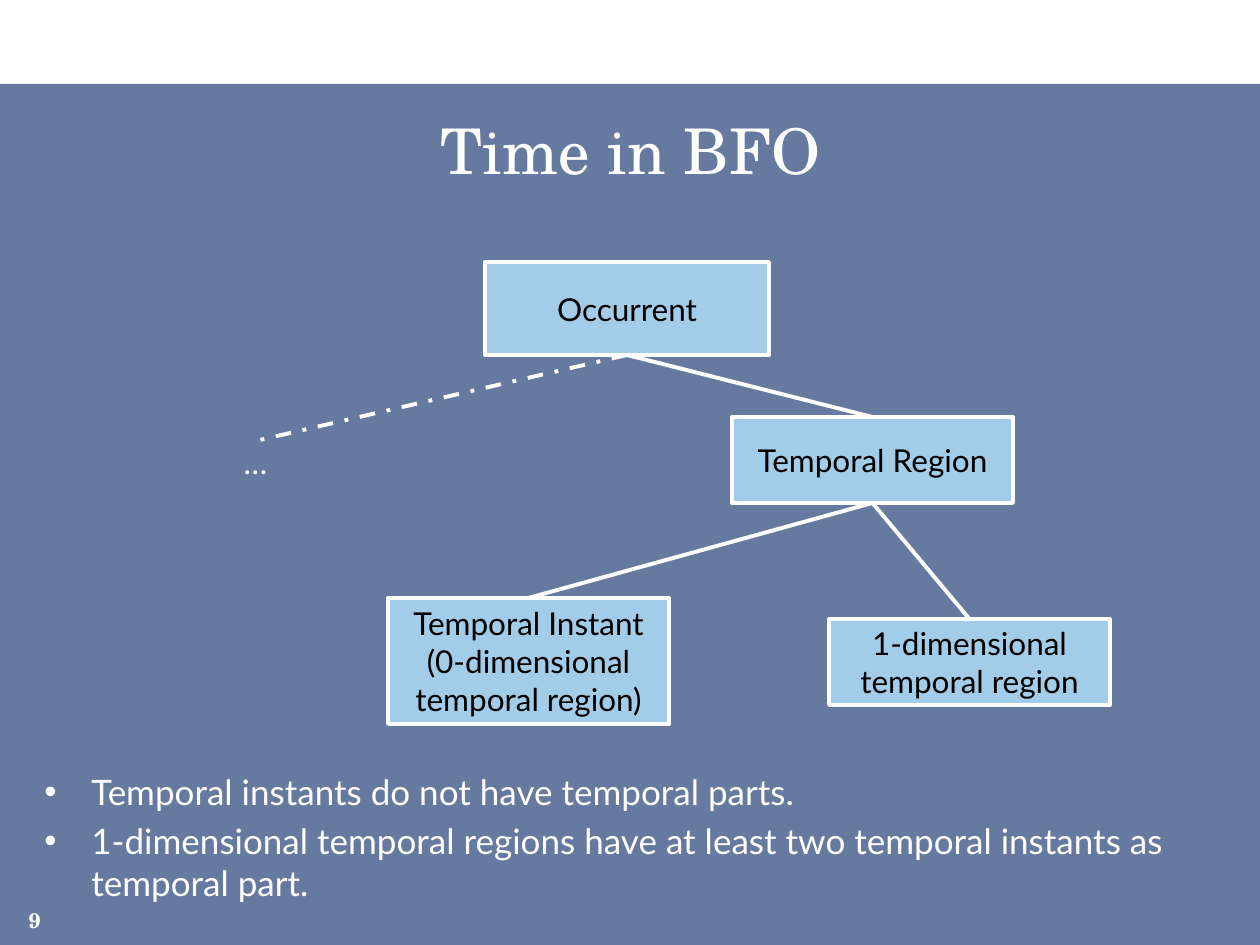
from lxml.etree import SubElement
from pptx import Presentation
from pptx.dml.color import RGBColor
from pptx.enum.dml import MSO_LINE
from pptx.enum.shapes import MSO_CONNECTOR, MSO_SHAPE
from pptx.enum.text import MSO_ANCHOR, PP_ALIGN
from pptx.oxml.ns import qn
from pptx.util import Emu, Pt

PX_PER_INCH = 126
WHITE = RGBColor(0xFF, 0xFF, 0xFF)
BLACK = RGBColor(0x00, 0x00, 0x00)
NAVY = RGBColor(0x00, 0x20, 0x60)
SKY = RGBColor(0xA2, 0xCC, 0xE8)
SANS = "Lato"
SERIF = "TeX Gyre Schola"
BOTTOM, TOP = 2, 0


def px(length):
    return Emu(round(length * 914400 / PX_PER_INCH))


def write_text(shape, text, size=18, font=SANS, color=WHITE, align=PP_ALIGN.CENTER,
               anchor=MSO_ANCHOR.MIDDLE, wrap=False, bold=False, hanging=0, gap=0):
    frame = shape.text_frame
    frame.word_wrap = wrap
    frame.vertical_anchor = anchor
    for index, line in enumerate(text.split("\n")):
        paragraph = frame.add_paragraph() if index else frame.paragraphs[0]
        paragraph.alignment = align
        if gap and index:
            paragraph.space_before = Pt(gap)
        if hanging:
            properties = paragraph._p.get_or_add_pPr()
            properties.set("marL", str(px(hanging)))
            properties.set("indent", str(-px(hanging)))
            SubElement(properties, qn("a:buFont")).set("typeface", "Arial")
            SubElement(properties, qn("a:buChar")).set("char", "•")
        run = paragraph.add_run()
        run.text = line
        run.font.size = Pt(size)
        run.font.name = font
        run.font.bold = bold
        run.font.color.rgb = color


class SlideBuilder:
    def __init__(self, slide, line_width=2.25):
        self.shapes = slide.shapes
        self.line_width = Pt(line_width)

    def rectangle(self, left, top, width, height, fill):
        shape = self.shapes.add_shape(
            MSO_SHAPE.RECTANGLE, px(left), px(top), px(width), px(height))
        shape.shadow.inherit = False
        shape.fill.solid()
        shape.fill.fore_color.rgb = fill
        return shape

    def backdrop(self, left, top, width, height, opacity):
        panel = self.rectangle(left, top, width, height, NAVY)
        panel.line.fill.background()
        color = panel._element.spPr.find(qn("a:solidFill")).find(qn("a:srgbClr"))
        SubElement(color, qn("a:alpha")).set("val", str(opacity * 1000))

    def node(self, text, left, top, width, height):
        box = self.rectangle(left, top, width, height, SKY)
        box.line.color.rgb = WHITE
        box.line.width = self.line_width
        write_text(box, text, color=BLACK)
        return box

    def label(self, text, left, top, width, height, **style):
        box = self.shapes.add_textbox(px(left), px(top), px(width), px(height))
        write_text(box, text, **style)
        return box

    def link(self, parent, child, dash=None):
        edge = self.shapes.add_connector(MSO_CONNECTOR.STRAIGHT, 0, 0, 0, 0)
        edge.begin_connect(parent, BOTTOM)
        edge.end_connect(child, TOP)
        edge.line.color.rgb = WHITE
        edge.line.width = self.line_width
        if dash:
            edge.line.dash_style = dash
        SubElement(edge._element.spPr, qn("a:effectLst"))


def main():
    deck = Presentation()
    deck.slide_width, deck.slide_height = px(1260), px(945)
    builder = SlideBuilder(deck.slides.add_slide(deck.slide_layouts[6]))

    builder.backdrop(0, 84, 1260, 861, opacity=60)
    builder.label("Time in BFO", 32, 105, 1197, 105, size=36, font=SERIF,
                  anchor=MSO_ANCHOR.TOP, wrap=True)
    builder.label(
        "Temporal instants do not have temporal parts.\n"
        "1-dimensional temporal regions have at least two temporal instants as temporal part.",
        32, 764, 1197, 150, size=20, align=PP_ALIGN.LEFT,
        anchor=MSO_ANCHOR.TOP, wrap=True, hanging=47, gap=4)
    builder.label("9", -10, 895, 63, 50, size=12, font=SERIF,
                  align=PP_ALIGN.RIGHT, wrap=True, bold=True)

    occurrent = builder.node("Occurrent", 485, 262, 284, 93)
    others = builder.label("…", 157, 441, 197, 42)
    region = builder.node("Temporal Region", 732, 417, 281, 86)
    instant = builder.node(
        "Temporal Instant\n(0-dimensional\ntemporal region)", 388, 598, 281, 126)
    interval = builder.node("1-dimensional\ntemporal region", 829, 619, 281, 86)

    builder.link(occurrent, others, dash=MSO_LINE.DASH_DOT)
    for parent, child in ((occurrent, region), (region, instant), (region, interval)):
        builder.link(parent, child)

    deck.save("out.pptx")


if __name__ == "__main__":
    main()
